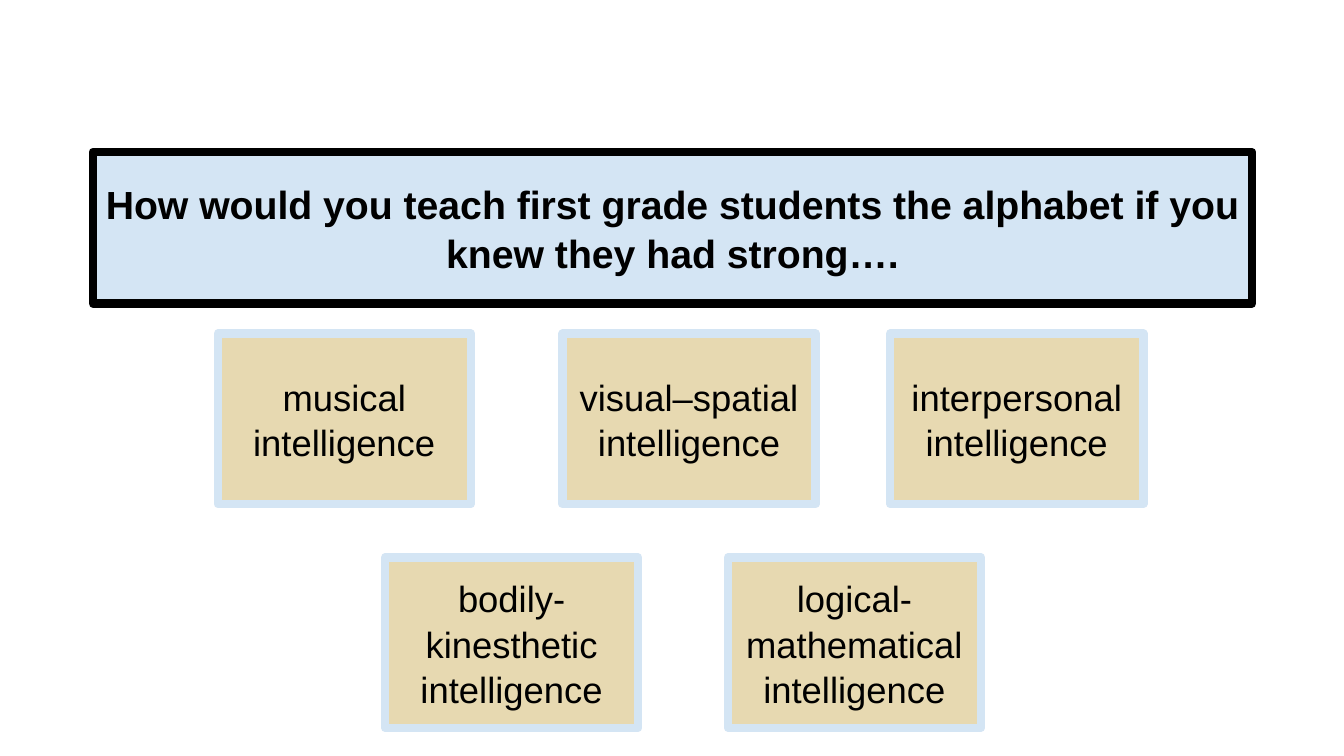
from pptx import Presentation
from pptx.dml.color import RGBColor
from pptx.enum.shapes import MSO_SHAPE
from pptx.enum.text import MSO_ANCHOR, PP_ALIGN
from pptx.util import Pt

QUESTION = "How would you teach first grade students the alphabet if you knew they had strong…."
ROWS = [
    (331, [(216, "musical intelligence"),
           (558, "visual–spatial intelligence"),
           (883, "interpersonal intelligence")]),
    (553, [(382, "bodily-kinesthetic intelligence"),
           (722, "logical-mathematical intelligence")]),
]
COLORS = {"blue": "D4E5F4", "sand": "E7D9B1", "black": "000000"}
QUESTION_BOX = (92, 151, 1150, 150)
CARD_SIZE = (251, 169)
QUESTION_STYLE = {"fill": "blue", "line": "black",
                  "font": {"size": Pt(28), "bold": True}}
CARD_STYLE = {"fill": "sand", "line": "blue",
              "font": {"size": Pt(26), "bold": False}}
PX = 9144


def color(name):
    return RGBColor.from_string(COLORS[name])


def add_box(slide, box, text, style):
    shape = slide.shapes.add_shape(MSO_SHAPE.RECTANGLE, *(n * PX for n in box))
    shape.shadow.inherit = False
    shape.fill.solid()
    shape.fill.fore_color.rgb = color(style["fill"])
    shape.line.color.rgb = color(style["line"])
    shape.line.width = Pt(6)
    frame = shape.text_frame
    frame.word_wrap = True
    frame.vertical_anchor = MSO_ANCHOR.MIDDLE
    paragraph = frame.paragraphs[0]
    paragraph.alignment = PP_ALIGN.CENTER
    paragraph.line_spacing = 1.04
    run = paragraph.add_run()
    run.text = text
    run.font.name = "Arial"
    run.font.color.rgb = color("black")
    for name, value in style["font"].items():
        setattr(run.font, name, value)


def main():
    presentation = Presentation()
    presentation.slide_width = 1333 * PX
    presentation.slide_height = 750 * PX
    slide = presentation.slides.add_slide(presentation.slide_layouts[6])
    add_box(slide, QUESTION_BOX, QUESTION, QUESTION_STYLE)
    for top, cards in ROWS:
        for left, text in cards:
            add_box(slide, (left, top, *CARD_SIZE), text, CARD_STYLE)
    presentation.save("out.pptx")


if __name__ == "__main__":
    main()
